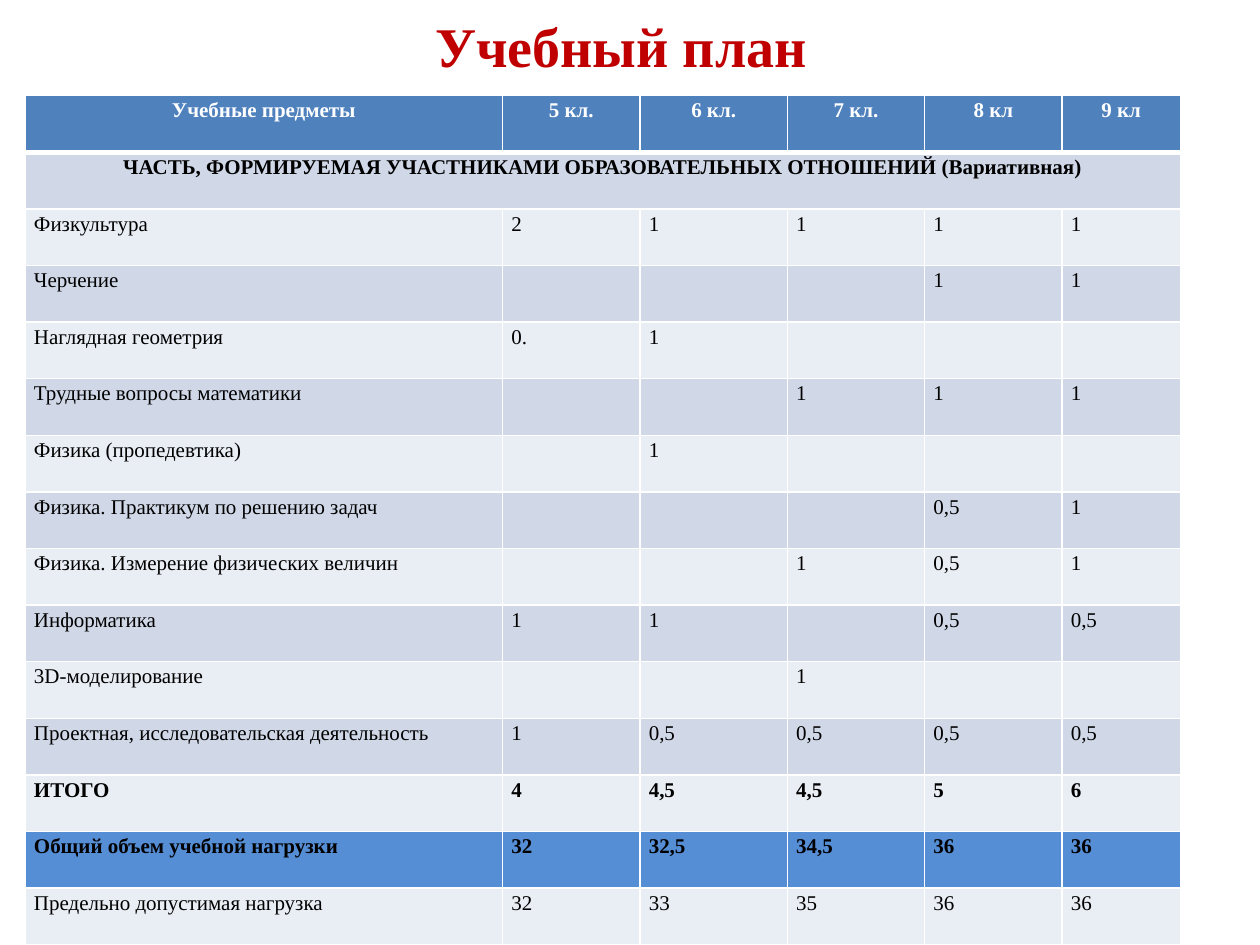
"""Build the curriculum slide: a title over a table of hours by grade."""
from lxml import etree
from pptx import Presentation, util as u
from pptx.dml.color import RGBColor
from pptx.enum import text
from pptx.oxml.ns import qn

TITLE = "Учебный план"
ROWS = [
    ("Учебные предметы", "5 кл.", "6 кл.", "7 кл.", "8 кл", "9 кл"),
    ("ЧАСТЬ, ФОРМИРУЕМАЯ УЧАСТНИКАМИ ОБРАЗОВАТЕЛЬНЫХ ОТНОШЕНИЙ (Вариативная)",
     "", "", "", "", ""),
    ("Физкультура", "2", "1", "1", "1", "1"),
    ("Черчение", "", "", "", "1", "1"),
    ("Наглядная геометрия", "0.", "1", "", "", ""),
    ("Трудные вопросы математики", "", "", "1", "1", "1"),
    ("Физика (пропедевтика)", "", "1", "", "", ""),
    ("Физика. Практикум по решению задач", "", "", "", "0,5", "1"),
    ("Физика. Измерение физических величин", "", "", "1", "0,5", "1"),
    ("Информатика", "1", "1", "", "0,5", "0,5"),
    ("3D-моделирование", "", "", "1", "", ""),
    ("Проектная, исследовательская деятельность", "1", "0,5", "0,5", "0,5", "0,5"),
    ("ИТОГО", "4", "4,5", "4,5", "5", "6"),
    ("Общий объем учебной нагрузки", "32", "32,5", "34,5", "36", "36"),
    ("Предельно допустимая нагрузка", "32", "33", "35", "36", "36"),
]
COLS = [3.79, 1.09, 1.17, 1.09, 1.09, 0.94]
HEAD, PART, SUM, LOAD = 0, 1, 12, 13
BOLD = {HEAD, PART, SUM, LOAD}
FACE = "Times New Roman"
RED = RGBColor(0xC0, 0x00, 0x00)
BLACK = RGBColor(0x00, 0x00, 0x00)
WHITE = RGBColor(0xFF, 0xFF, 0xFF)
BANDS = [RGBColor(0xE9, 0xED, 0xF4), RGBColor(0xD0, 0xD8, 0xE8)]
FILLS = {HEAD: RGBColor(0x4F, 0x81, 0xBD), LOAD: RGBColor(0x55, 0x8E, 0xD5)}


def style(para, size, color, bold, mid):
    font = para.font
    font.name, font.size, font.bold = FACE, u.Pt(size), bold
    font.color.rgb = color
    para.alignment = text.PP_ALIGN.CENTER if mid else text.PP_ALIGN.LEFT


def edge(cell, row):
    props = cell._tc.get_or_add_tcPr()
    thick = {HEAD: "lnB", PART: "lnT"}.get(row)
    for side in ("lnL", "lnR", "lnT", "lnB"):
        width = u.Pt(3 if side == thick else 1)
        line = etree.SubElement(props, qn("a:" + side), w=str(width))
        fill = etree.SubElement(line, qn("a:solidFill"))
        etree.SubElement(fill, qn("a:srgbClr"), val=str(WHITE))


def dress(cell, row, word):
    edge(cell, row)
    cell.fill.solid()
    cell.fill.fore_color.rgb = FILLS.get(row, BANDS[row % 2])
    cell.margin_left = cell.margin_right = u.Inches(0.07)
    cell.margin_top = cell.margin_bottom = 0
    cell.text = word
    para = cell.text_frame.paragraphs[0]
    para.line_spacing, para.space_after = 1.15, u.Pt(10)
    style(para, 12, WHITE if row == HEAD else BLACK, row in BOLD, row <= PART)


def main():
    deck = Presentation()
    deck.slide_width, deck.slide_height = u.Inches(10), u.Inches(7.5)
    slide = deck.slides.add_slide(deck.slide_layouts[6])

    box = slide.shapes.add_textbox(*map(u.Inches, (0.43, -0.27, 9, 1.25)))
    frame = box.text_frame
    frame.word_wrap = True
    frame.vertical_anchor = text.MSO_ANCHOR.MIDDLE
    frame.text = TITLE
    style(frame.paragraphs[0], 32, RED, True, True)

    area = map(u.Inches, (0.2, 0.76, sum(COLS), 6.74))
    grid = slide.shapes.add_table(len(ROWS), len(COLS), *area).table
    for col, width in zip(grid.columns, COLS):
        col.width = u.Inches(width)
    for row, words in enumerate(ROWS):
        for col, word in enumerate(words):
            dress(grid.cell(row, col), row, word)
    grid.cell(PART, 0).merge(grid.cell(PART, len(COLS) - 1))
    deck.save("out.pptx")


if __name__ == "__main__":
    main()
